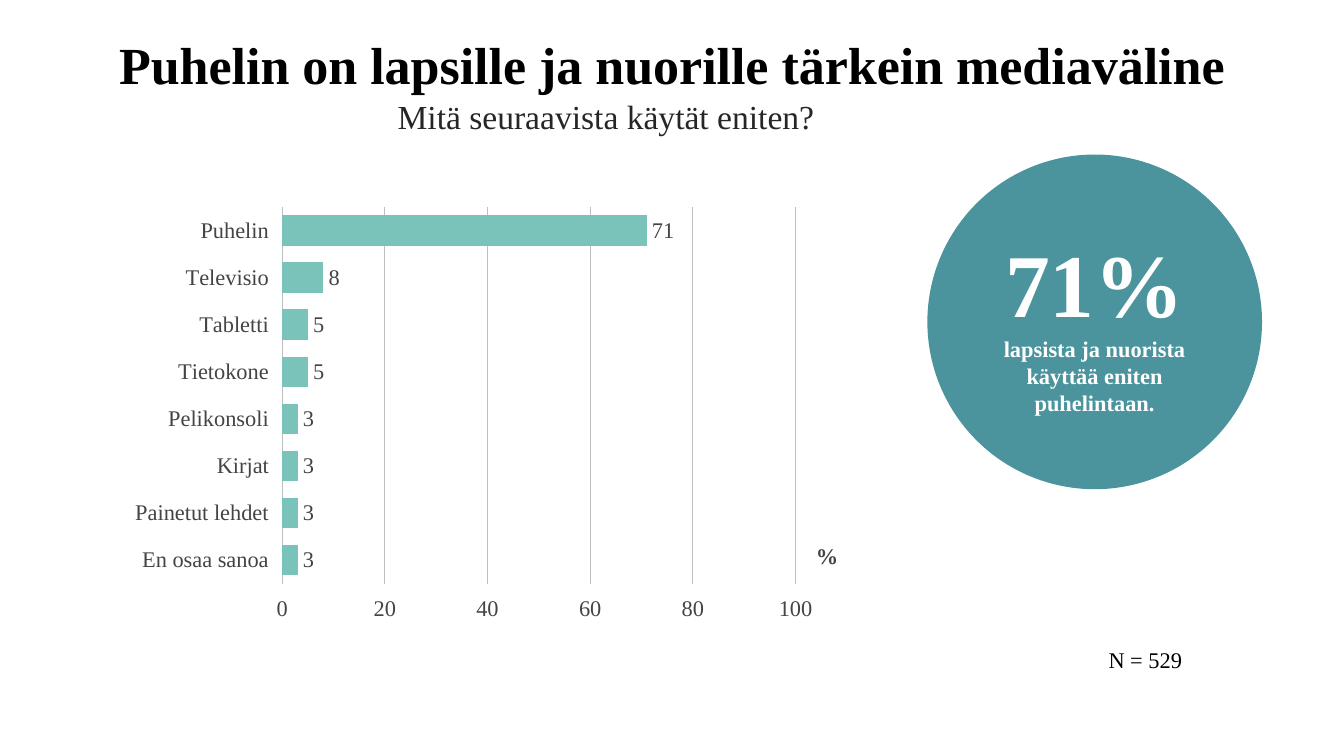
import lxml.etree
import pptx
import pptx.chart.data
import pptx.dml.color
import pptx.enum.chart
import pptx.enum.shapes
import pptx.enum.text
import pptx.oxml
import pptx.oxml.ns
import pptx.util

Inches = pptx.util.Inches
RGBColor = pptx.dml.color.RGBColor

FONT = "Times New Roman"
BLACK = RGBColor(0x00, 0x00, 0x00)
WHITE = RGBColor(0xFF, 0xFF, 0xFF)
DARK = RGBColor(0x26, 0x26, 0x26)
GREY = RGBColor(0x44, 0x44, 0x44)
GRID = RGBColor(0xBC, 0xBE, 0xC0)
MINT = RGBColor(0x7A, 0xC3, 0xBB)
TEAL = RGBColor(0x4B, 0x94, 0x9E)

DEVICES = {
    "Puhelin": 71,
    "Televisio": 8,
    "Tabletti": 5,
    "Tietokone": 5,
    "Pelikonsoli": 3,
    "Kirjat": 3,
    "Painetut lehdet": 3,
    "En osaa sanoa": 3,
}


def style_font(font, size, color, bold=False):
    """Set typeface, size, colour and weight."""
    font.name = FONT
    font.size = pptx.util.Pt(size)
    font.color.rgb = color
    font.bold = bold


def add_text(page, box, text, size, color, bold=False, wrap=True):
    """Add a one-paragraph text box and return its frame."""
    frame = page.shapes.add_textbox(*map(Inches, box)).text_frame
    frame.word_wrap = wrap
    para = frame.paragraphs[0]
    para.text = text
    style_font(para.font, size, color, bold)
    return frame


def add_title(page, box):
    """Add the centred headline, raised to leave room for the question."""
    frame = add_text(page, box, "Puhelin on lapsille ja nuorille tärkein mediaväline", 27.9, BLACK, True)
    frame.vertical_anchor = pptx.enum.text.MSO_ANCHOR.MIDDLE
    frame.margin_bottom = Inches(0.34)
    frame.paragraphs[0].alignment = pptx.enum.text.PP_ALIGN.CENTER


def add_question(page, box):
    """Add the survey question below the headline."""
    frame = add_text(page, box, "Mitä seuraavista käytät eniten?", 18, DARK, wrap=False)
    frame.paragraphs[0].line_spacing = 0.9


def make_layout(inner=False, **fractions):
    """Return a manual chart layout measured in fractions of the chart."""
    layout = pptx.oxml.parse_xml("<c:layout %s><c:manualLayout/></c:layout>" % pptx.oxml.ns.nsdecls("c"))
    settings = {"layoutTarget": "inner"} if inner else {}
    settings.update(xMode="edge", yMode="edge", **fractions)
    for name, value in settings.items():
        lxml.etree.SubElement(layout[0], pptx.oxml.ns.qn("c:" + name), val=str(value))
    return layout


def place_part(part, layout):
    """Replace the layout of a chart part."""
    for old in part.findall(pptx.oxml.ns.qn("c:layout")):
        part.remove(old)
    text = part.find(pptx.oxml.ns.qn("c:tx"))
    part.insert(0 if text is None else part.index(text) + 1, layout)


def add_device_chart(page, box):
    """Add the bar chart of the most used devices."""
    width, height = box[2:]
    data = pptx.chart.data.CategoryChartData(number_format="#,##0")
    data.categories = list(DEVICES)
    data.add_series("Series 1", list(DEVICES.values()))
    kind = pptx.enum.chart.XL_CHART_TYPE.BAR_CLUSTERED
    chart = page.shapes.add_chart(kind, *map(Inches, box), data).chart
    chart.has_legend = False
    chart.has_title = False
    style_font(chart.font, 12, GREY)

    devices, percent = chart.category_axis, chart.value_axis
    for axis in (devices, percent):
        axis.major_tick_mark = pptx.enum.chart.XL_TICK_MARK.NONE
        axis.minor_tick_mark = pptx.enum.chart.XL_TICK_MARK.NONE
        axis.format.line.fill.background()
        axis.tick_labels.number_format = "General"
        axis.tick_labels.number_format_is_linked = False
        style_font(axis.tick_labels.font, 12, GREY)
    devices.reverse_order = True
    devices.has_major_gridlines = False
    devices.tick_label_position = pptx.enum.chart.XL_TICK_LABEL_POSITION.LOW
    percent.tick_label_position = pptx.enum.chart.XL_TICK_LABEL_POSITION.HIGH
    percent.minimum_scale, percent.maximum_scale, percent.major_unit = 0, 100, 20
    percent.has_major_gridlines = True
    percent.major_gridlines.format.line.color.rgb = GRID
    percent.major_gridlines.format.line.width = pptx.util.Pt(0.5)
    frame = percent.axis_title.text_frame
    frame.text = "%"
    style_font(frame.paragraphs[0].font, 12, GREY, True)
    place_part(percent.axis_title._element, make_layout(x=5.14 / width, y=2.5 / height))

    plot = chart.plots[0]
    plot.gap_width = 55
    plot.vary_by_categories = False
    series = plot.series[0]
    series.format.fill.solid()
    series.format.fill.fore_color.rgb = MINT
    labels = series.data_labels
    labels.show_value = True
    labels.position = pptx.enum.chart.XL_LABEL_POSITION.OUTSIDE_END
    labels.number_format = "#,##0"
    labels.number_format_is_linked = False
    style_font(labels.font, 12, GREY)
    area = chart._chartSpace.chart.plotArea
    place_part(area, make_layout(True, x=1.2 / width, y=0.03 / height, w=3.82 / width, h=2.81 / height))


def add_highlight(page, box):
    """Add the circle with the key figure."""
    circle = page.shapes.add_shape(pptx.enum.shapes.MSO_SHAPE.OVAL, *map(Inches, box))
    circle.shadow.inherit = False
    circle.fill.solid()
    circle.fill.fore_color.rgb = TEAL
    circle.line.fill.background()
    frame = circle.text_frame
    frame.word_wrap = True
    frame.vertical_anchor = pptx.enum.text.MSO_ANCHOR.MIDDLE
    para = frame.paragraphs[0]
    para.alignment = pptx.enum.text.PP_ALIGN.CENTER
    for text, size in (("71% ", 48), ("lapsista ja nuorista käyttää eniten puhelintaan.", 12)):
        span = para.add_run()
        span.text = text
        style_font(span.font, size, WHITE, True)


def main():
    """Build and save the slide."""
    deck = pptx.Presentation()
    deck.slide_width = Inches(10)
    deck.slide_height = deck.slide_width * 9 // 16
    page = deck.slides.add_slide(deck.slide_layouts[6])
    add_title(page, (0, 0.15, 10, 0.94))
    add_text(page, (8.15, 4.76, 1.13, 0.3), "N = 529", 12, BLACK)
    add_device_chart(page, (0.9, 1.51, 5.37, 3.11))
    add_question(page, (2.86, 0.7, 3.35, 0.37))
    add_highlight(page, (6.9, 1.15, 2.49, 2.49))
    deck.save("out.pptx")


if __name__ == "__main__":
    main()
